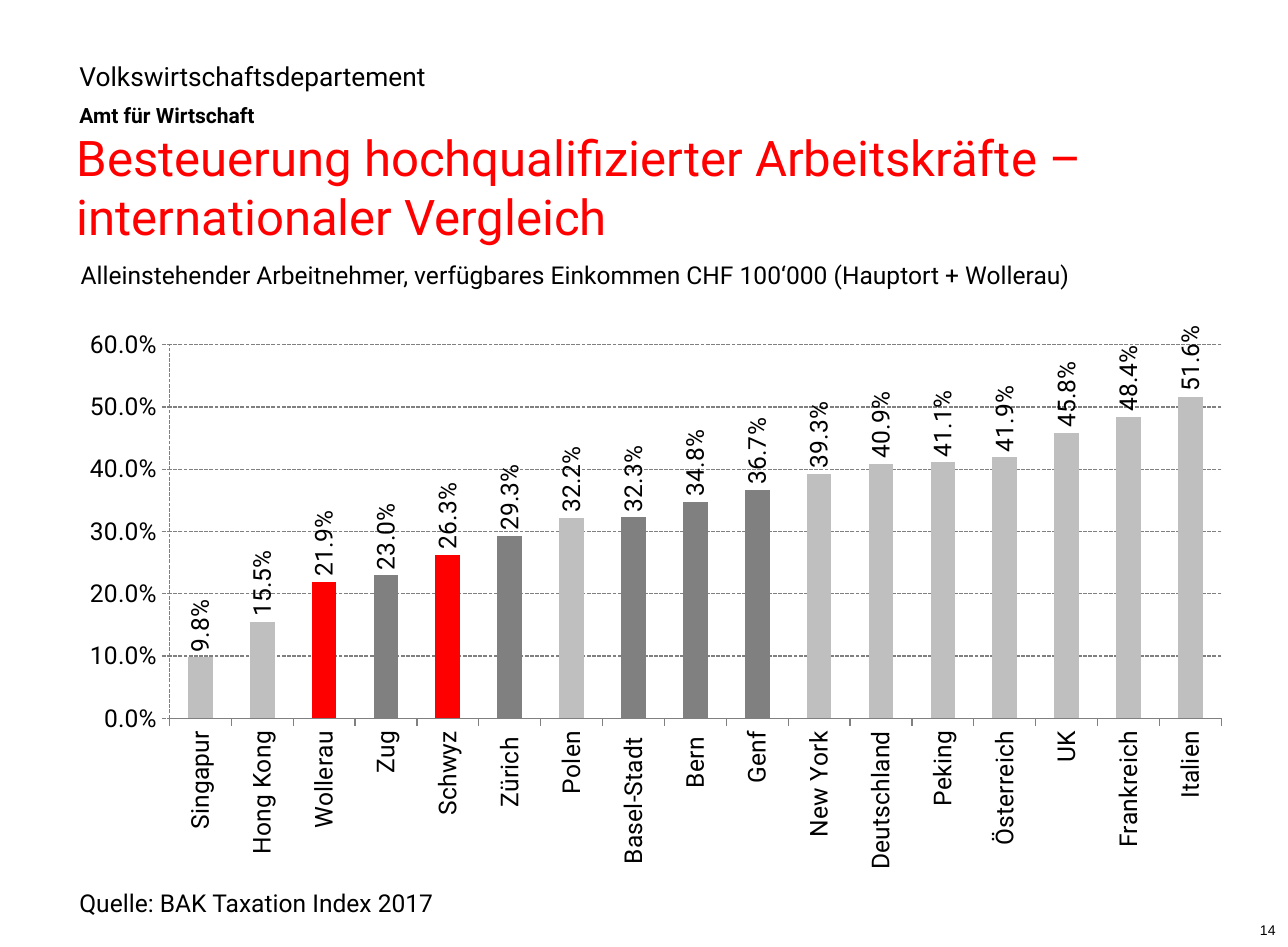
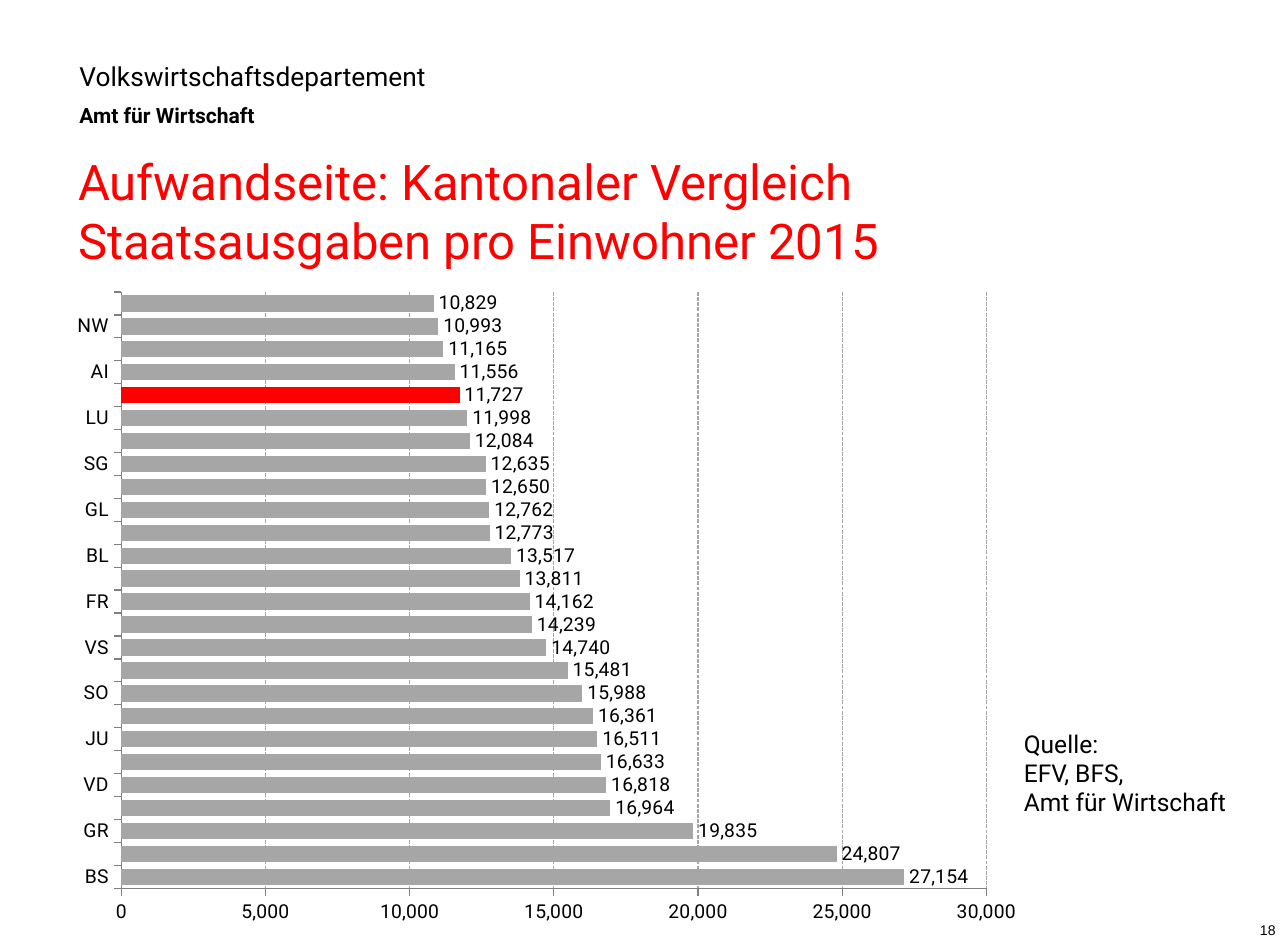
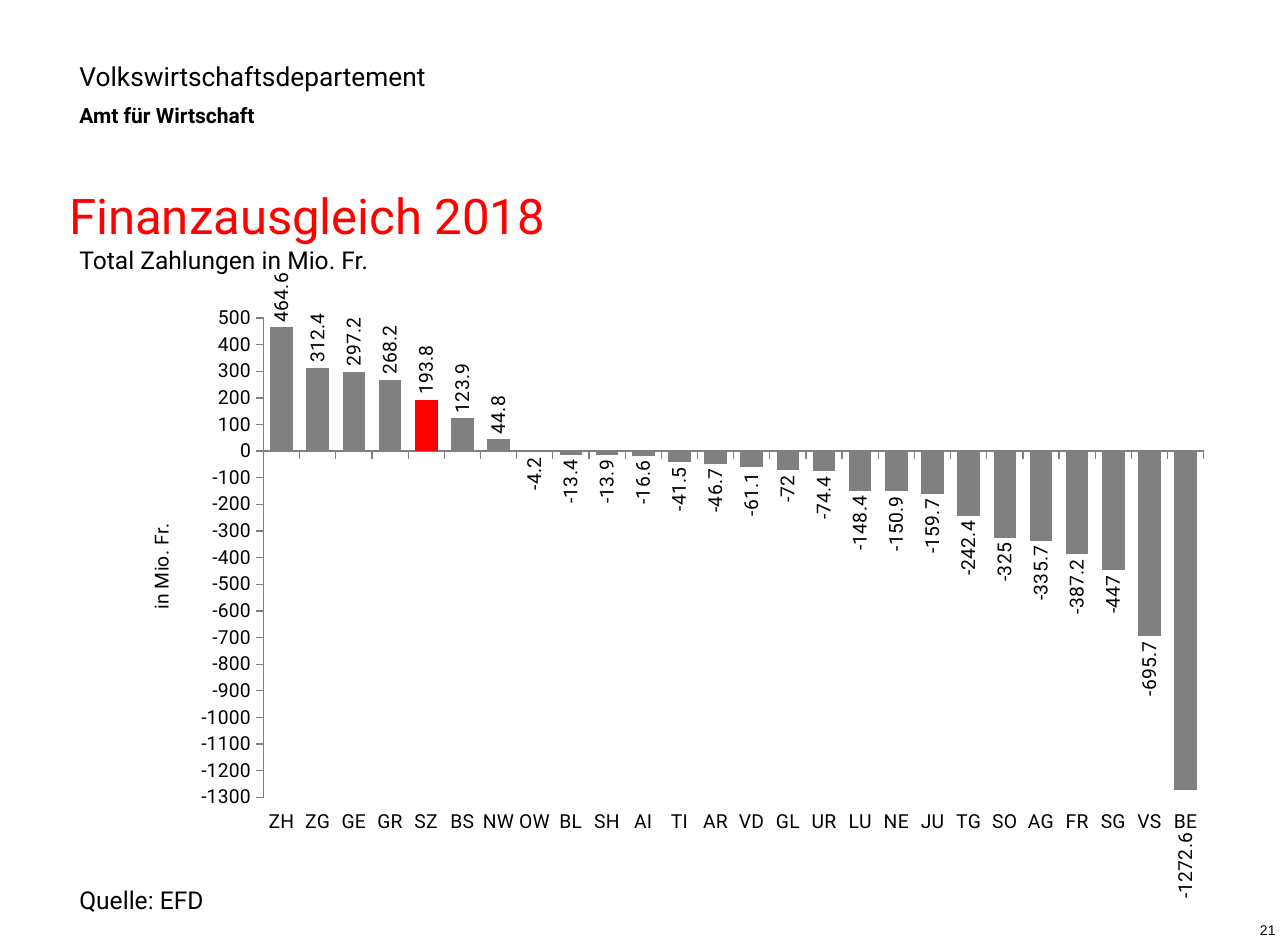
from dataclasses import dataclass

from lxml import etree
from pptx import Presentation
from pptx.chart.data import CategoryChartData
from pptx.dml.color import RGBColor
from pptx.enum import chart as ch, dml, shapes, text
from pptx.oxml.ns import qn
from pptx.util import Inches, Pt


@dataclass(frozen=True)
class Theme:
    font: str = "Roboto"
    number_font: str = "Arial"
    ink: str = "000000"
    paper: str = "FFFFFF"
    accent: str = "FF0000"
    dark: str = "808080"
    mid: str = "A6A6A6"
    light: str = "BFBFBF"
    title: int = 28
    department: int = 15
    office: int = 12
    body: int = 14
    small: int = 11
    page: int = 8


THEME = Theme()


def rgb(value):
    return RGBColor.from_string(value)


def style(font, size, color=THEME.ink, name=THEME.font, bold=False):
    font.size, font.name, font.bold = Pt(size), name, bold
    font.color.rgb = rgb(color)


def paint(fill, color):
    fill.solid()
    fill.fore_color.rgb = rgb(color)


def write(frame, content, size, color=THEME.ink, name=THEME.font,
          anchor=text.MSO_ANCHOR.TOP, align=text.PP_ALIGN.LEFT):
    frame.word_wrap = True
    frame.vertical_anchor = anchor
    frame.text = content
    for paragraph in frame.paragraphs:
        paragraph.alignment = align
        for run in paragraph.runs:
            style(run.font, size, color, name)
    return frame


def add_text(slide, box, content, size, **look):
    frame = slide.shapes.add_textbox(*map(Inches, box)).text_frame
    return write(frame, content, size, **look)


def add_panel(slide, box, content, size):
    """Add text on a borderless rectangle in the paper colour."""
    panel = slide.shapes.add_shape(shapes.MSO_SHAPE.RECTANGLE, *map(Inches, box))
    panel.shadow.inherit = False
    paint(panel.fill, THEME.paper)
    panel.line.fill.background()
    write(panel.text_frame, content, size)


def add_header(slide, box):
    frame = add_text(slide, box, "Volkswirtschaftsdepartement\nAmt für Wirtschaft",
                     THEME.department)
    frame.margin_left = frame.margin_right = frame.margin_top = frame.margin_bottom = 0
    office = frame.paragraphs[1]
    office.space_before = Pt(6)
    style(office.runs[0].font, THEME.office, bold=True)


def add_base_slide(prs, title, title_box, page):
    """Add a blank slide with department header, title and page number."""
    slide = prs.slides.add_slide(prs.slide_layouts[6])
    add_header(slide, (0.63, 0.48, 2.97, 0.59))
    add_text(slide, title_box, title, THEME.title, color=THEME.accent,
             anchor=text.MSO_ANCHOR.MIDDLE)
    add_text(slide, (8.08, 7.25, 2.12, 0.25), page, THEME.page,
             name=THEME.number_font, align=text.PP_ALIGN.RIGHT)
    return slide


def set_layout(parent, index, **values):
    """Give a chart part a manual layout, creating the element at index if missing."""
    layout = parent.find(qn("c:layout"))
    if layout is None:
        layout = etree.Element(qn("c:layout"))
        parent.insert(index, layout)
    manual = etree.SubElement(layout, qn("c:manualLayout"))
    for tag, value in values.items():
        etree.SubElement(manual, qn(f"c:{tag}")).set("val", str(value))


def turn_text(chart, part):
    """Make the text of a chart part read upwards."""
    for body in chart._chartSpace.xpath(f".//{part}//a:bodyPr"):
        body.set("rot", "-5400000")
        body.set("vert", "horz")


def style_line(line, color=THEME.dark, dashed=False):
    line.color.rgb = rgb(color)
    line.width = Pt(0.75)
    if dashed:
        line.dash_style = dml.MSO_LINE.SQUARE_DOT


def add_bars(slide, box, kind, values, plot_box, size, color, highlights, gap, fmt,
             grid=None):
    """Add a one-series bar chart; highlights maps category to colour."""
    data = CategoryChartData()
    data.categories = list(values)
    data.add_series("Series 1", list(values.values()))
    chart = slide.shapes.add_chart(kind, *map(Inches, box), data).chart
    chart.has_legend = chart.has_title = False
    style(chart.font, size)

    plot = chart.plots[0]
    plot.gap_width, plot.vary_by_categories = gap, False
    series = plot.series[0]
    series.invert_if_negative = False
    paint(series.format.fill, color)
    for index, category in enumerate(values):
        if category in highlights:
            paint(series.points[index].format.fill, highlights[category])

    labels = series.data_labels
    labels.show_value = True
    labels.position = ch.XL_LABEL_POSITION.OUTSIDE_END
    labels.number_format, labels.number_format_is_linked = fmt, False
    style(labels.font, size)
    for leader in chart._chartSpace.xpath(".//c:showLeaderLines"):
        leader.set("val", "0")

    for axis in (chart.category_axis, chart.value_axis):
        axis.major_tick_mark = ch.XL_TICK_MARK.OUTSIDE
        axis.minor_tick_mark = ch.XL_TICK_MARK.NONE
        style(axis.tick_labels.font, size)
        style_line(axis.format.line)
    axis = chart.value_axis
    axis.tick_labels.number_format = fmt
    axis.tick_labels.number_format_is_linked = False
    axis.has_major_gridlines = grid is not None
    if grid:
        style_line(axis.major_gridlines.format.line, grid, dashed=True)

    set_layout(chart._chartSpace.chart.plotArea, 0, layoutTarget="inner",
               xMode="edge", yMode="edge", **dict(zip("xywh", plot_box)))
    return chart


def set_scale(axis, low, high, step):
    axis.minimum_scale, axis.maximum_scale, axis.major_unit = low, high, step


def build_tax_slide(prs):
    slide = add_base_slide(
        prs, "Besteuerung hochqualifizierter Arbeitskräfte – internationaler Vergleich",
        (0.51, 1.14, 9.3, 0.67), "14")
    add_panel(slide, (0.54, 2.01, 9.2, 0.32),
              "Alleinstehender Arbeitnehmer, verfügbares Einkommen CHF 100‘000 "
              "(Hauptort + Wollerau)", THEME.body)
    rates = {
        "Singapur": 0.098, "Hong Kong": 0.155, "Wollerau": 0.219, "Zug": 0.23,
        "Schwyz": 0.263, "Zürich ": 0.293, "Polen": 0.322, "Basel-Stadt ": 0.323,
        "Bern ": 0.348, "Genf": 0.367, "New York": 0.393, "Deutschland": 0.409,
        "Peking": 0.411, "Österreich": 0.419, "UK": 0.458, "Frankreich": 0.484,
        "Italien": 0.516,
    }
    swiss = ("Zug", "Zürich ", "Basel-Stadt ", "Bern ", "Genf")
    highlights = dict.fromkeys(swiss, THEME.dark)
    highlights.update(dict.fromkeys(("Wollerau", "Schwyz"), THEME.accent))
    chart = add_bars(slide, (0.53, 2.52, 9.33, 4.46), ch.XL_CHART_TYPE.COLUMN_CLUSTERED,
                     rates, (0.087, 0.047, 0.893, 0.664), THEME.body, THEME.light,
                     highlights, 150, "0.0%", grid=THEME.dark)
    set_scale(chart.value_axis, 0, 0.6, 0.1)
    style_line(chart.value_axis.format.line, dashed=True)
    turn_text(chart, "c:dLbls")
    turn_text(chart, "c:catAx/c:txPr")
    add_text(slide, (0.53, 6.98, 8.42, 0.34), "Quelle: BAK Taxation Index 2017",
             THEME.body)


def build_spending_slide(prs):
    slide = add_base_slide(
        prs, "Aufwandseite: Kantonaler Vergleich Staatsausgaben pro Einwohner 2015",
        (0.52, 1.33, 9.06, 0.67), "18")
    spending = {
        "BS": 27154, "GE": 24807, "GR": 19835, "BE": 16964, "VD": 16818, "NE": 16633,
        "JU": 16511, "ZG": 16361, "SO": 15988, "ZH": 15481, "VS": 14740, "TI": 14239,
        "FR": 14162, "UR": 13811, "BL": 13517, "SH": 12773, "GL": 12762, "AR": 12650,
        "SG": 12635, "OW": 12084, "LU": 11998, "SZ": 11727, "AI": 11556, "TG": 11165,
        "NW": 10993, "AG": 10829,
    }
    chart = add_bars(slide, (0.55, 2.18, 7.62, 5.14), ch.XL_CHART_TYPE.BAR_CLUSTERED,
                     spending, (0.054, 0.026, 0.899, 0.925), THEME.small, THEME.mid,
                     {"SZ": THEME.accent}, 40, "#,##0", grid=THEME.mid)
    set_scale(chart.value_axis, 0, 30000, 5000)
    add_text(slide, (8.01, 5.72, 1.93, 0.81), "Quelle:\vEFV, BFS,\vAmt für Wirtschaft",
             THEME.body)


def build_equalisation_slide(prs):
    slide = add_base_slide(prs, "Finanzausgleich 2018", (0.45, 1.37, 8.67, 0.67), "21")
    payments = {
        "ZH": 464.6, "ZG": 312.4, "GE": 297.2, "GR": 268.2, "SZ": 193.8, "BS": 123.9,
        "NW": 44.8, "OW": -4.2, "BL": -13.4, "SH": -13.9, "AI": -16.6, "TI": -41.5,
        "AR": -46.7, "VD": -61.1, "GL": -72, "UR": -74.4, "LU": -148.4, "NE": -150.9,
        "JU": -159.7, "TG": -242.4, "SO": -325, "AG": -335.7, "FR": -387.2, "SG": -447,
        "VS": -695.7, "BE": -1272.6,
    }
    chart = add_bars(slide, (0.96, 2.16, 8.74, 4.96), ch.XL_CHART_TYPE.COLUMN_CLUSTERED,
                     payments, (0.129, 0.072, 0.852, 0.766), THEME.small, THEME.dark,
                     {"SZ": THEME.accent}, 60, "General")
    chart.category_axis.tick_label_position = ch.XL_TICK_LABEL_POSITION.LOW
    axis = chart.value_axis
    set_scale(axis, -1300, 500, 100)
    unit = axis.axis_title.text_frame
    unit.text = "in Mio. Fr."
    style(unit.paragraphs[0].runs[0].font, THEME.small)
    set_layout(axis.axis_title._element, 1, xMode="edge", yMode="edge", x=0.021, y=0.394)

    # The longest bar's label moves below the category names.
    lowest = chart.plots[0].series[0].points[len(payments) - 1].data_label
    lowest.position = ch.XL_LABEL_POSITION.OUTSIDE_END
    style(lowest.font, THEME.small)
    set_layout(chart._chartSpace.xpath(".//c:dLbl")[0], 1, x=0, y=0.06)
    turn_text(chart, "c:dLbls")
    turn_text(chart, "c:valAx/c:title")

    add_text(slide, (0.53, 6.96, 4.53, 0.34), "Quelle: EFD", THEME.body)
    add_text(slide, (0.53, 1.89, 8.39, 0.34), "Total Zahlungen in Mio. Fr.", THEME.body)


def main():
    prs = Presentation()
    prs.slide_width, prs.slide_height = Inches(10.2), Inches(7.5)
    build_tax_slide(prs)
    build_spending_slide(prs)
    build_equalisation_slide(prs)
    prs.save("out.pptx")


if __name__ == "__main__":
    main()
